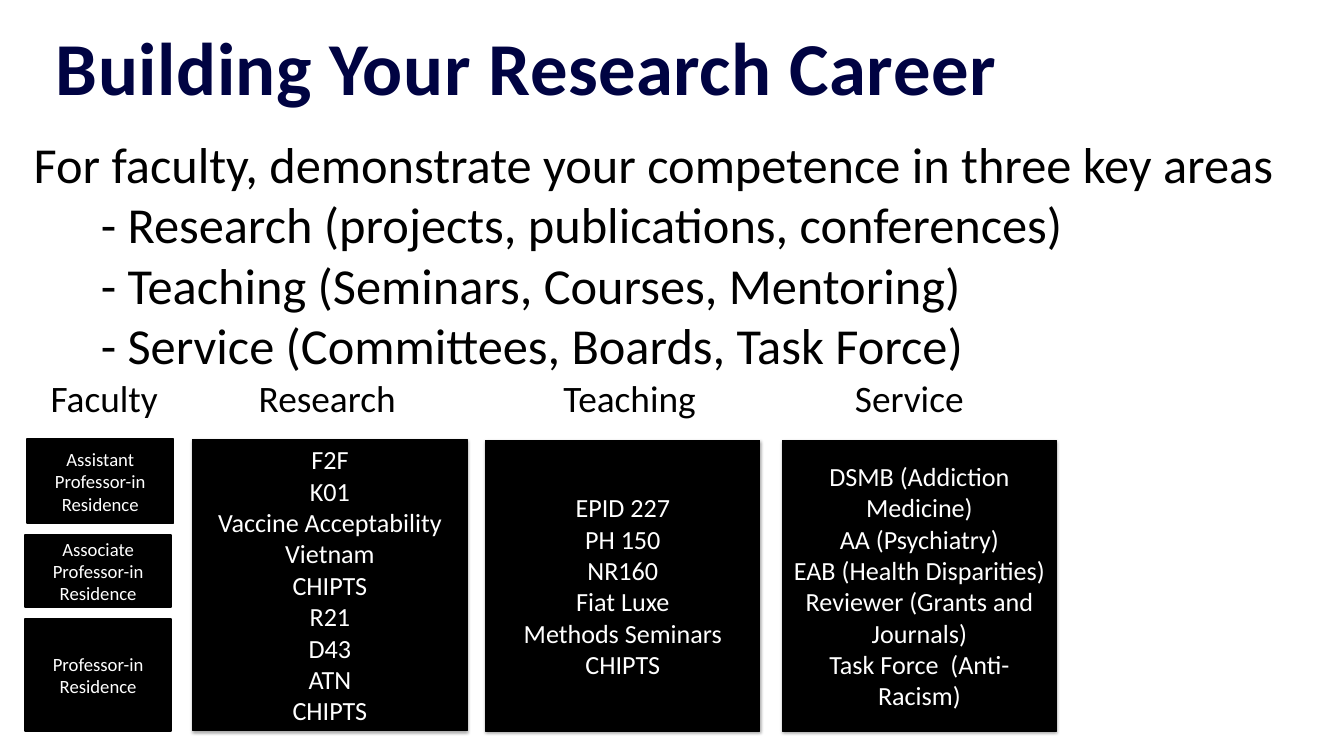
from lxml import etree
from pptx import Presentation
from pptx.dml.color import RGBColor
from pptx.enum.shapes import MSO_SHAPE as Shape
from pptx.enum.text import MSO_ANCHOR as Anchor, MSO_AUTO_SIZE as AutoSize, PP_ALIGN as Align
from pptx.oxml.ns import qn
from pptx.util import Cm, Pt

NAVY = RGBColor(0x00, 0x03, 0x42)
BLACK = RGBColor(0x00, 0x00, 0x00)
WHITE = RGBColor(0xFF, 0xFF, 0xFF)

AREAS = [
    "Research (projects, publications, conferences)",
    "Teaching (Seminars, Courses, Mentoring)",
    "Service (Committees, Boards, Task Force)",
]
# Heading and its centre in cm from the start of the text
HEADINGS = [("Faculty", 2.67), ("Research", 11.1), ("Teaching", 22.53), ("Service", 33.1)]

# Text, left, top, height
RANKS = [
    ("Assistant Professor-in Residence", 1.02, 16.61, 3.18),
    ("Associate Professor-in Residence", 0.94, 20.22, 2.74),
    ("Professor-in Residence", 0.94, 23.39, 4.24),
]
# Left, top, lines
COLUMNS = [
    (7.29, 16.61, ["F2F", "K01", "Vaccine Acceptability", "Vietnam", "CHIPTS",
                   "R21", "D43", "ATN", "CHIPTS"]),
    (18.36, 16.64, ["EPID 227", "PH 150", "NR160", "Fiat Luxe", "Methods Seminars", "CHIPTS"]),
    (29.57, 16.64, ["DSMB (Addiction Medicine)", "AA (Psychiatry)", "EAB (Health Disparities)",
                    "Reviewer (Grants and Journals)", "Task Force  (Anti-Racism)"]),
]


class SlideBuilder:
    def __init__(self, slide, font_name="Calibri"):
        self.slide = slide
        self.font_name = font_name

    def style(self, paragraph, size, color, bold=False):
        for run in paragraph.runs:
            run.font.name = self.font_name
            run.font.size = Pt(size)
            run.font.bold = bold
            run.font.color.rgb = color

    def title(self, text, left, top, width, height):
        shape = self.slide.shapes.title
        shape.left, shape.top, shape.width, shape.height = map(Cm, (left, top, width, height))
        frame = shape.text_frame
        frame.text = text
        frame.auto_size = AutoSize.NONE
        frame.vertical_anchor = Anchor.TOP
        frame.margin_left = frame.margin_right = frame.margin_top = frame.margin_bottom = 0
        paragraph = frame.paragraphs[0]
        paragraph.alignment = Align.LEFT
        paragraph.line_spacing = Pt(67.7)
        self.style(paragraph, 80, NAVY, bold=True)
        paragraph.runs[0].font._element.set("spc", "60")

    def introduction(self, lead, areas, headings, left, top, width, height):
        """Lead sentence, indented areas and a row of headings on centred tabs."""
        box = self.slide.shapes.add_textbox(*map(Cm, (left, top, width, height)))
        frame = box.text_frame
        frame.word_wrap = True
        heading_row = "".join(f"\t{name}" for name, _ in headings)
        frame.text = "\n".join([lead, *(f"- {area}" for area in areas), heading_row])
        first, *middle, last = frame.paragraphs
        for paragraph in middle:
            paragraph._p.get_or_add_pPr().set("marL", str(Cm(2.54)))
        tabs = etree.SubElement(last._p.get_or_add_pPr(), qn("a:tabLst"))
        for _, centre in headings:
            etree.SubElement(tabs, qn("a:tab"), pos=str(Cm(centre)), algn="ctr")
        for paragraph in (first, *middle):
            self.style(paragraph, 54, BLACK)
        self.style(last, 40, BLACK)

    def box(self, lines, left, top, width, height, size, line_width, shadow=False):
        shape = self.slide.shapes.add_shape(Shape.RECTANGLE, *map(Cm, (left, top, width, height)))
        shape.fill.solid()
        shape.fill.fore_color.rgb = BLACK
        shape.line.color.rgb = BLACK
        shape.line.width = Pt(line_width)
        shape.shadow.inherit = False
        if shadow:
            self.add_shadow(shape)
        frame = shape.text_frame
        frame.word_wrap = True
        frame.vertical_anchor = Anchor.MIDDLE
        frame.text = "\n".join(lines)
        for paragraph in frame.paragraphs:
            paragraph.alignment = Align.CENTER
            self.style(paragraph, size, WHITE)

    def add_shadow(self, shape):
        effects = shape._element.spPr.find(qn("a:effectLst"))
        outer = etree.SubElement(effects, qn("a:outerShdw"), blurRad=str(Pt(3.1)),
                                 dist=str(Pt(1.8)), dir="5400000", rotWithShape="0")
        color = etree.SubElement(outer, qn("a:srgbClr"), val=str(BLACK))
        etree.SubElement(color, qn("a:alpha"), val="35000")


def main():
    presentation = Presentation()
    presentation.slide_width, presentation.slide_height = Cm(50.8), Cm(28.58)
    title_only = presentation.slide_layouts[5]
    builder = SlideBuilder(presentation.slides.add_slide(title_only))

    builder.title("Building Your Research Career", 2.11, 1.8, 43.18, 2.57)
    builder.introduction("For faculty, demonstrate your competence in three key areas",
                         AREAS, HEADINGS, 1.02, 4.9, 47.9, 11.2)
    for text, left, top, height in RANKS:
        builder.box([text], left, top, 5.54, height, size=20, line_width=2)
    for left, top, lines in COLUMNS:
        builder.box(lines, left, top, 10.36, 11, size=28, line_width=0.75, shadow=True)

    presentation.save("out.pptx")


if __name__ == "__main__":
    main()
